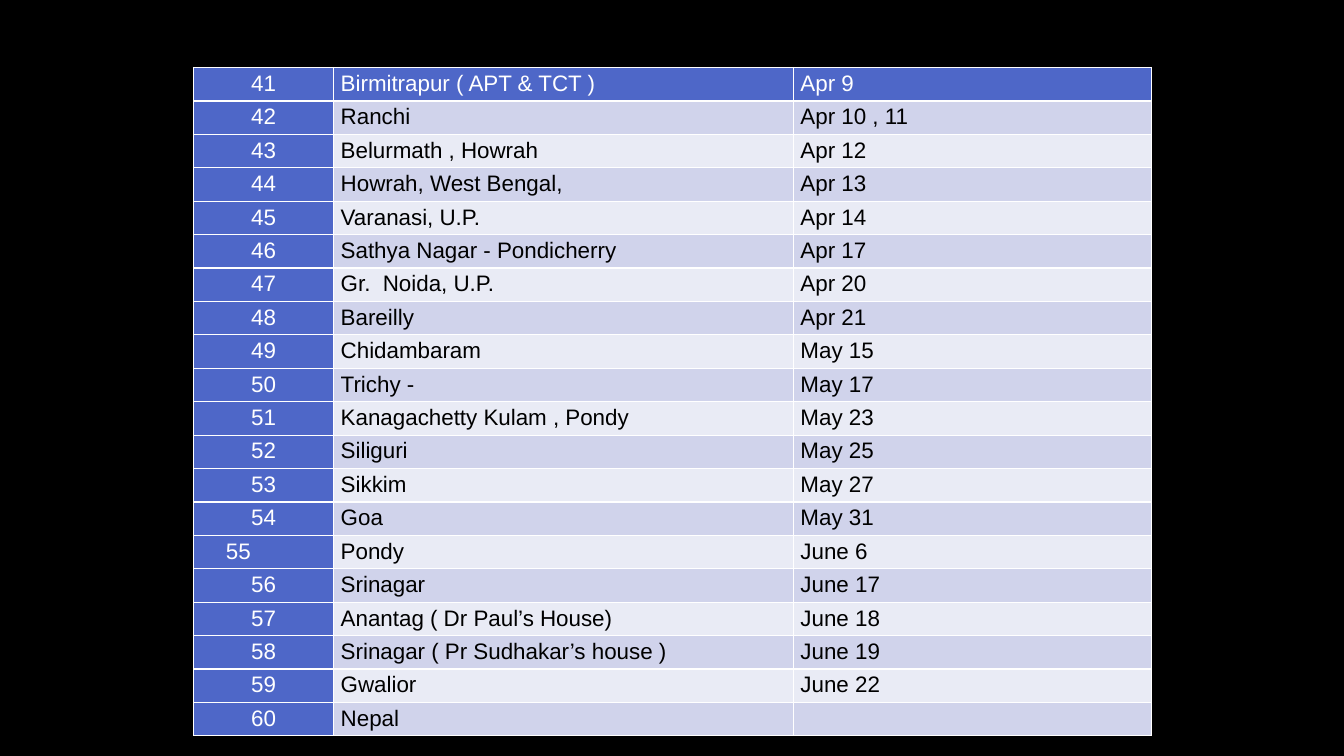
from lxml.etree import SubElement
from pptx import Presentation
from pptx.dml.color import RGBColor
from pptx.enum.text import PP_ALIGN as Align
from pptx.oxml.ns import qn
from pptx.util import Inches, Pt

BLUE, WHITE, BLACK = "4E67C8", "FFFFFF", "000000"
BANDS = ["E9EBF5", "D0D3EB"]
COLUMN_WIDTHS = [1.39, 4.56, 3.55]
FIRST_NUMBER = 41
INDENTED_NUMBER = 55
VISITS = [
    ("Birmitrapur ( APT & TCT )", "Apr 9"),
    ("Ranchi", "Apr 10 , 11"),
    ("Belurmath , Howrah", "Apr 12"),
    ("Howrah, West Bengal,", "Apr 13"),
    ("Varanasi, U.P.", "Apr 14"),
    ("Sathya Nagar - Pondicherry", "Apr 17"),
    ("Gr.  Noida, U.P.", "Apr 20"),
    ("Bareilly", "Apr 21"),
    ("Chidambaram", "May 15"),
    ("Trichy -", "May 17"),
    ("Kanagachetty Kulam , Pondy", "May 23"),
    ("Siliguri", "May 25"),
    ("Sikkim", "May 27"),
    ("Goa", "May 31"),
    ("Pondy", "June 6"),
    ("Srinagar", "June 17"),
    ("Anantag ( Dr Paul’s House)", "June 18"),
    ("Srinagar ( Pr Sudhakar’s house )", "June 19"),
    ("Gwalior", "June 22"),
    ("Nepal", ""),
]


def rgb(color):
    return RGBColor.from_string(color)


def add_borders(cell, color=WHITE, width=1):
    tcPr = cell._tc.get_or_add_tcPr()
    for side in ("lnL", "lnR", "lnT", "lnB"):
        ln = SubElement(tcPr, qn(f"a:{side}"), w=str(Pt(width)))
        SubElement(SubElement(ln, qn("a:solidFill")), qn("a:srgbClr"), val=color)


def style_cell(cell, fill):
    add_borders(cell)
    cell.fill.solid()
    cell.fill.fore_color.rgb = rgb(fill)
    cell.margin_left = cell.margin_right = Inches(0.07)
    cell.margin_top = cell.margin_bottom = 0


def write_cell(cell, text, color, align):
    p = cell.text_frame.paragraphs[0]
    p.text = text
    p.alignment = align
    p.line_spacing = 1.15
    p.font.name = "Arial"
    p.font.size = Pt(16)
    p.font.bold = False
    p.font.color.rgb = rgb(color)


def add_visit_table(slide):
    table = slide.shapes.add_table(
        len(VISITS), len(COLUMN_WIDTHS),
        Inches(1.92), Inches(0.67), Inches(9.5), Inches(6.63)).table
    for column, width in zip(table.columns, COLUMN_WIDTHS):
        column.width = Inches(width)
    for row, visit in enumerate(VISITS):
        number = FIRST_NUMBER + row
        for col, text in enumerate((str(number), *visit)):
            cell = table.cell(row, col)
            accent = row == 0 or col == 0
            centred = col == 0 and number != INDENTED_NUMBER
            style_cell(cell, BLUE if accent else BANDS[row % 2])
            if text:
                write_cell(cell, text, WHITE if accent else BLACK,
                           Align.CENTER if centred else Align.LEFT)
    table.cell(INDENTED_NUMBER - FIRST_NUMBER, 0).margin_left = Inches(0.32)


def main():
    prs = Presentation()
    prs.slide_width, prs.slide_height = Inches(13.33), Inches(7.5)
    slide = prs.slides.add_slide(prs.slide_layouts[6])
    slide.background.fill.solid()
    slide.background.fill.fore_color.rgb = rgb(BLACK)
    add_visit_table(slide)
    prs.save("out.pptx")


if __name__ == "__main__":
    main()
